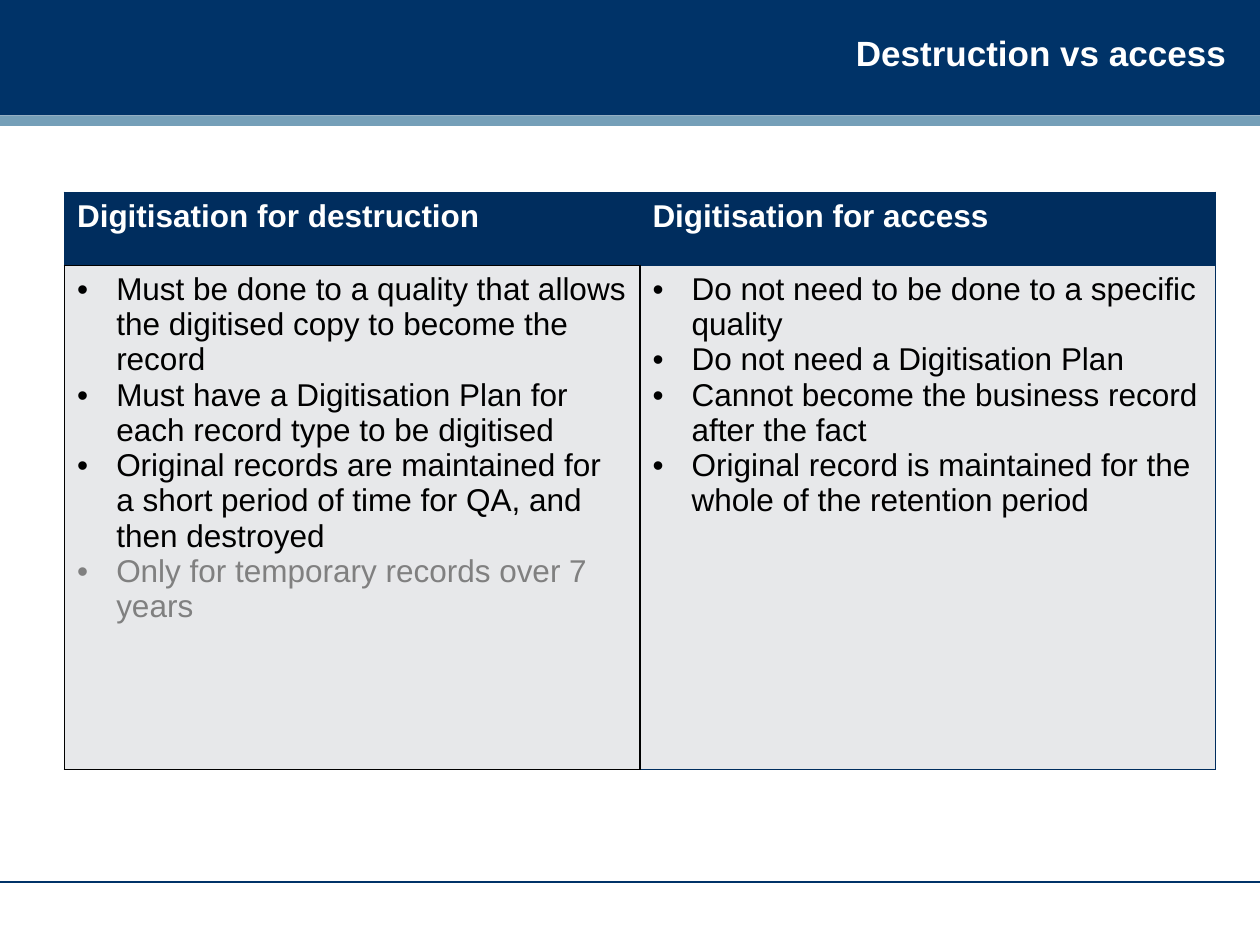
from lxml.etree import SubElement
from pptx import Presentation
from pptx.dml.color import RGBColor as RGB
from pptx.enum.shapes import MSO_CONNECTOR as Line, MSO_SHAPE as Shape
from pptx.enum.text import MSO_ANCHOR as Anchor, PP_ALIGN as Align
from pptx.oxml.ns import qn
from pptx.util import Cm, Pt

HEX = {
    "navy": "003368",
    "head": "002D5E",
    "band": "759FB8",
    "body": "E7E8EA",
    "white": "FFFFFF",
    "black": "000000",
    "grey": "808080",
}
SIDES = ("lnL", "lnR", "lnT", "lnB")
HEADS = ("Digitisation for destruction", "Digitisation for access")
LISTS = (
    (
        ("Must be done to a quality that allows the digitised copy to become the record", "black"),
        ("Must have a Digitisation Plan for each record type to be digitised", "black"),
        ("Original records are maintained for a short period of time for QA, and then destroyed", "black"),
        ("Only for temporary records over 7 years", "grey"),
    ),
    (
        ("Do not need to be done to a specific quality", "black"),
        ("Do not need a Digitisation Plan", "black"),
        ("Cannot become the business record after the fact", "black"),
        ("Original record is maintained for the whole of the retention period", "black"),
    ),
)
HEAD_EDGES = (
    ("head", None, "head", "black"),
    (None, "head", "head", "head"),
)
BODY_EDGES = (
    ("black", "black", "black", "black"),
    ("black", "head", "head", "head"),
)


class Deck:
    font = "Arial"

    def __init__(self, wide, high):
        self.prs = Presentation()
        self.prs.slide_width, self.prs.slide_height = Cm(wide), Cm(high)
        self.slide = self.prs.slides.add_slide(self.prs.slide_layouts[6])

    def color(self, name):
        return RGB.from_string(HEX[name])

    def bar(self, x, y, w, h, fill):
        box = self.slide.shapes.add_shape(Shape.RECTANGLE, Cm(x), Cm(y), Cm(w), Cm(h))
        box.shadow.inherit = False
        box.fill.solid()
        box.fill.fore_color.rgb = self.color(fill)
        box.line.fill.background()

    def rule(self, x, y, w, color):
        line = self.slide.shapes.add_connector(Line.STRAIGHT, Cm(x), Cm(y), Cm(x + w), Cm(y))
        line.line.color.rgb = self.color(color)
        line.line.width = Pt(0.75)
        SubElement(line._element.spPr, qn("a:effectLst"))

    def style(self, para, size, color, bold=False):
        for run in para.runs:
            run.font.name = self.font
            run.font.size = Pt(size)
            run.font.bold = bold
            run.font.color.rgb = self.color(color)

    def title(self, x, y, w, h, text):
        frame = self.slide.shapes.add_textbox(Cm(x), Cm(y), Cm(w), Cm(h)).text_frame
        frame.word_wrap = True
        frame.vertical_anchor = Anchor.MIDDLE
        frame.text = text
        para = frame.paragraphs[0]
        para.alignment = Align.RIGHT
        self.style(para, 20, "white", True)

    def bullet(self, para):
        props = para._p.get_or_add_pPr()
        props.set("marL", str(Cm(0.79)))
        props.set("indent", str(-Cm(0.79)))
        SubElement(props, qn("a:buFont"), typeface=self.font)
        SubElement(props, qn("a:buChar"), char="•")

    def paint(self, cell, fill, edges):
        props = cell._tc.get_or_add_tcPr()
        for side, color in zip(SIDES, edges):
            line = SubElement(props, qn(f"a:{side}"), w=str(Pt(1)))
            if color:
                solid = SubElement(line, qn("a:solidFill"))
                SubElement(solid, qn("a:srgbClr"), val=HEX[color])
            else:
                SubElement(line, qn("a:noFill"))
        cell.fill.solid()
        cell.fill.fore_color.rgb = self.color(fill)

    def table(self, x, y, w, rows):
        count = len(HEADS)
        grid = self.slide.shapes.add_table(
            len(rows), count, Cm(x), Cm(y), Cm(w), Cm(sum(rows))
        ).table
        grid.horz_banding = False
        for row, high in zip(grid.rows, rows):
            row.height = Cm(high)
        for col in range(count):
            grid.columns[col].width = Cm(w / count)
            head, body = grid.cell(0, col), grid.cell(1, col)
            head.text_frame.text = HEADS[col]
            self.style(head.text_frame.paragraphs[0], 18, "white", True)
            self.paint(head, "head", HEAD_EDGES[col])
            body.text_frame.text = "\n".join(text for text, _ in LISTS[col])
            for para, (_, color) in zip(body.text_frame.paragraphs, LISTS[col]):
                self.bullet(para)
                self.style(para, 18, color)
            self.paint(body, "body", BODY_EDGES[col])


def main():
    deck = Deck(25.4, 19.05)
    deck.bar(0, 0, 25.4, 2.33, "navy")
    deck.rule(0, 17.78, 25.4, "navy")
    deck.bar(0, 2.33, 25.4, 0.21, "band")
    deck.title(8.26, 0, 16.71, 2.12, "Destruction vs access")
    deck.table(1.3, 3.88, 23.2, (1.47, 10.16))
    deck.prs.save("out.pptx")


if __name__ == "__main__":
    main()
